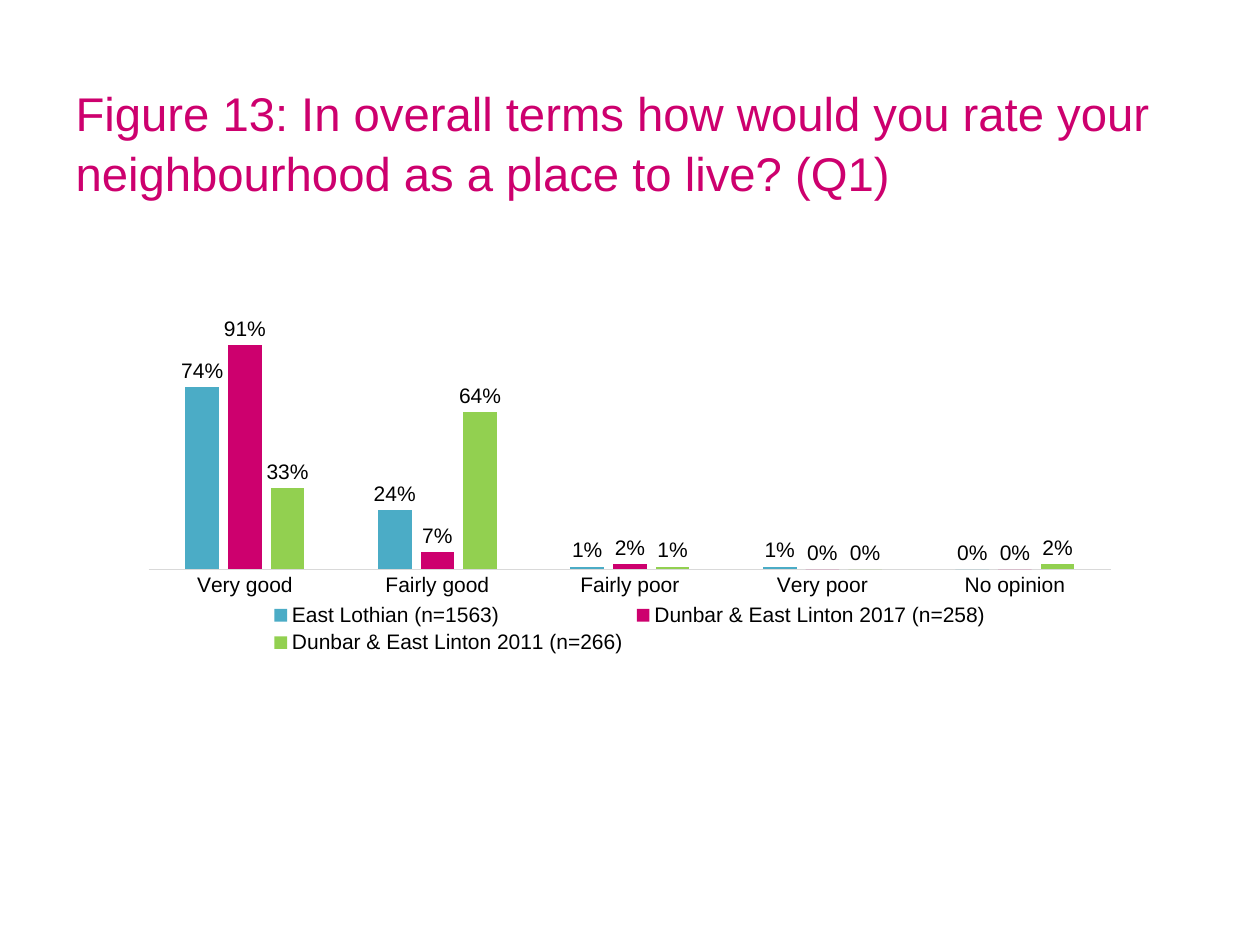
import pptx
import pptx.util
from pptx.chart.data import CategoryChartData
from pptx.dml.color import RGBColor
from pptx.enum.chart import XL_CHART_TYPE, XL_LABEL_POSITION, XL_LEGEND_POSITION, XL_TICK_MARK
from pptx.enum.text import MSO_ANCHOR, MSO_AUTO_SIZE, PP_ALIGN
from pptx.oxml import parse_xml
from pptx.oxml.ns import nsdecls

Pt = pptx.util.Pt

FONT = "Arial"
BLACK = RGBColor(0x00, 0x00, 0x00)
TEAL = RGBColor(0x4B, 0xAC, 0xC6)
MAGENTA = RGBColor(0xCD, 0x00, 0x6E)
GREEN = RGBColor(0x92, 0xD0, 0x50)
AXIS_GREY = RGBColor(0xD9, 0xD9, 0xD9)

TITLE = "Figure 13: In overall terms how would you rate your neighbourhood as a place to live? (Q1)"
RATINGS = ["Very good", "Fairly good", "Fairly poor", "Very poor", "No opinion"]
SURVEYS = [
    ("East Lothian (n=1563)", TEAL, [0.74, 0.24, 0.01, 0.01, 0]),
    ("Dunbar & East Linton 2017 (n=258)", MAGENTA, [0.91, 0.07, 0.02, 0, 0]),
    ("Dunbar & East Linton 2011 (n=266)", GREEN, [0.33, 0.64, 0.01, 0, 0.02]),
]

TITLE_BOX = (36, 21.6, 648, 118)
CHART_BOX = (73.5, 163.5, 573, 213)
PLOT_AREA = {"x": 0.02, "y": 0.1, "w": 0.96, "h": 0.66}


def style_font(font, size=12, color=BLACK):
    font.name = FONT
    font.size = Pt(size)
    font.bold = False
    font.color.rgb = color


def write_text(shape, text, box, size, color, line_spacing=1.0):
    shape.left, shape.top, shape.width, shape.height = map(Pt, box)
    frame = shape.text_frame
    frame.text = text
    frame.word_wrap = True
    frame.auto_size = MSO_AUTO_SIZE.NONE
    frame.vertical_anchor = MSO_ANCHOR.MIDDLE
    paragraph = frame.paragraphs[0]
    paragraph.alignment = PP_ALIGN.LEFT
    paragraph.line_spacing = line_spacing
    style_font(paragraph.runs[0].font, size, color)


def fix_plot_area(chart, fractions):
    """Pin the inner plot area to fractions of the chart's size."""
    modes = "".join(f'<c:{side}Mode val="edge"/>' for side in "xy")
    sizes = "".join(f'<c:{side} val="{value}"/>' for side, value in fractions.items())
    plot_area = chart._chartSpace.chart.plotArea
    for layout in plot_area.findall("{*}layout"):
        plot_area.remove(layout)
    plot_area.insert(0, parse_xml(
        f'<c:layout {nsdecls("c")}><c:manualLayout><c:layoutTarget val="inner"/>'
        f'{modes}{sizes}</c:manualLayout></c:layout>'))


def add_ratings_chart(slide):
    data = CategoryChartData(number_format="0%")
    data.categories = RATINGS
    for name, _, shares in SURVEYS:
        data.add_series(name, shares)
    chart = slide.shapes.add_chart(
        XL_CHART_TYPE.COLUMN_CLUSTERED, *map(Pt, CHART_BOX), data).chart
    chart.has_title = False
    style_font(chart.font)

    plot = chart.plots[0]
    plot.gap_width, plot.overlap = 219, -27
    plot.vary_by_categories = False
    for series, (_, color, _) in zip(plot.series, SURVEYS):
        series.format.fill.solid()
        series.format.fill.fore_color.rgb = color
        series.invert_if_negative = False
        labels = series.data_labels
        labels.show_value = True
        labels.position = XL_LABEL_POSITION.OUTSIDE_END
        labels.number_format = "0%"
        labels.number_format_is_linked = False
        style_font(labels.font)

    rating_axis = chart.category_axis
    rating_axis.major_tick_mark = rating_axis.minor_tick_mark = XL_TICK_MARK.NONE
    rating_axis.format.line.color.rgb = AXIS_GREY
    rating_axis.format.line.width = Pt(0.75)
    style_font(rating_axis.tick_labels.font)

    share_axis = chart.value_axis
    share_axis.minimum_scale, share_axis.maximum_scale = 0, 1
    share_axis.has_major_gridlines = False
    share_axis.tick_labels.number_format = "0%"
    share_axis.tick_labels.number_format_is_linked = False
    share_axis.visible = False

    chart.has_legend = True
    chart.legend.position = XL_LEGEND_POSITION.BOTTOM
    chart.legend.include_in_layout = False
    style_font(chart.legend.font)
    fix_plot_area(chart, PLOT_AREA)


def main():
    presentation = pptx.Presentation()
    presentation.slide_width, presentation.slide_height = Pt(720), Pt(540)
    slide = presentation.slides.add_slide(presentation.slide_layouts[5])
    write_text(slide.shapes.title, TITLE, TITLE_BOX, size=27, color=MAGENTA, line_spacing=1.05)
    add_ratings_chart(slide)
    presentation.save("out.pptx")


if __name__ == "__main__":
    main()
